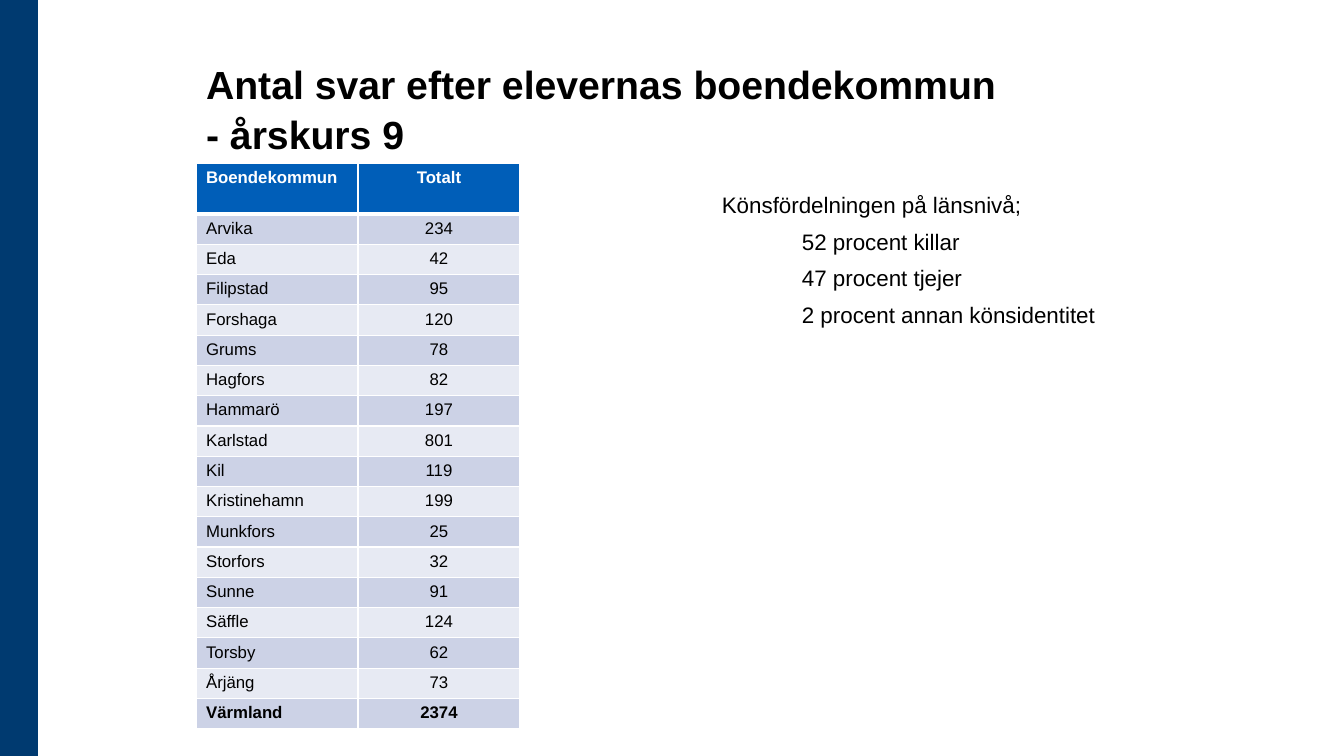
from copy import deepcopy

from lxml.etree import SubElement
from pptx import Presentation
from pptx.dml.color import RGBColor
from pptx.enum.shapes import MSO_SHAPE as Shape
from pptx.enum.text import MSO_ANCHOR as Anchor, MSO_AUTO_SIZE as AutoSize, PP_ALIGN as Align
from pptx.oxml.ns import qn
from pptx.util import Pt

# Content
TITLE = "Antal svar efter elevernas boendekommun\v- årskurs 9"
HEADER = ("Boendekommun", "Totalt")
ANSWERS = [
    ("Arvika", 234), ("Eda", 42), ("Filipstad", 95), ("Forshaga", 120),
    ("Grums", 78), ("Hagfors", 82), ("Hammarö", 197), ("Karlstad", 801),
    ("Kil", 119), ("Kristinehamn", 199), ("Munkfors", 25), ("Storfors", 32),
    ("Sunne", 91), ("Säffle", 124), ("Torsby", 62), ("Årjäng", 73),
    ("Värmland", 2374),
]
GENDER_HEADING = "Könsfördelningen på länsnivå;"
GENDER_SHARES = ["52 procent killar", "47 procent tjejer", "2 procent annan könsidentitet"]

# Look
FONT = "Arial"
BLACK = RGBColor(0x00, 0x00, 0x00)
WHITE = RGBColor(0xFF, 0xFF, 0xFF)
NAVY = RGBColor(0x00, 0x3A, 0x70)
BLUE = RGBColor(0x00, 0x5E, 0xB8)
BAND_DARK = RGBColor(0xCC, 0xD2, 0xE6)
BAND_LIGHT = RGBColor(0xE7, 0xEA, 0xF3)

# Layout in px
EMU_PER_PX = 914400 / 100.8
SLIDE_WIDTH, SLIDE_HEIGHT = 1344, 756
COLUMN_WIDTH, HEADER_HEIGHT, ROW_HEIGHT = 162, 51, 29


def px(*lengths):
    return [round(length * EMU_PER_PX) for length in lengths]


def write(paragraph, text, size=12, color=BLACK, bold=False, align=Align.LEFT,
          line_spacing=None, space_before=0, indent=0):
    paragraph.text = text
    paragraph.alignment = align
    paragraph.line_spacing = line_spacing
    paragraph.space_before = Pt(space_before)
    if indent:
        paragraph._p.get_or_add_pPr().set("marL", str(px(indent)[0]))
    for run in paragraph.runs:
        run.font.name, run.font.size, run.font.bold = FONT, Pt(size), bold
        run.font.color.rgb = color
    for line_break in paragraph._p.findall(qn("a:br")):
        line_break.append(deepcopy(paragraph.runs[0]._r.rPr))


def set_borders(cell, bottom):
    properties = cell._tc.get_or_add_tcPr()
    for index, (side, width) in enumerate([("L", 1), ("R", 1), ("T", 1), ("B", bottom)]):
        line = SubElement(properties, qn(f"a:ln{side}"), w=str(Pt(width)))
        fill = SubElement(line, qn("a:solidFill"))
        SubElement(fill, qn("a:srgbClr"), val=str(WHITE))
        properties.insert(index, line)


presentation = Presentation()
presentation.slide_width, presentation.slide_height = px(SLIDE_WIDTH, SLIDE_HEIGHT)
slide = presentation.slides.add_slide(presentation.slide_layouts[5])

# Side bar
bar = slide.shapes.add_shape(Shape.RECTANGLE, *px(0, 0, 38, SLIDE_HEIGHT))
bar.shadow.inherit = False
bar.fill.solid()
bar.fill.fore_color.rgb = NAVY
bar.line.fill.background()

# Title
title = slide.shapes.title
title.left, title.top, title.width, title.height = px(196, 53, 953, 146)
title.text_frame.vertical_anchor = Anchor.TOP
title.text_frame.auto_size = AutoSize.NONE
write(title.text_frame.paragraphs[0], TITLE, size=28, bold=True, line_spacing=1.05)

# Gender shares
shares = slide.shapes.add_textbox(*px(691, 185, 504, 337)).text_frame
shares.word_wrap = True
write(shares.paragraphs[0], GENDER_HEADING, size=16, line_spacing=1.05, indent=21)
for share in GENDER_SHARES:
    write(shares.add_paragraph(), share, size=16, line_spacing=1.05, space_before=6, indent=101)

# Answers by municipality
rows = [HEADER, *ANSWERS]
table_height = HEADER_HEIGHT + ROW_HEIGHT * len(ANSWERS)
table = slide.shapes.add_table(
    len(rows), len(HEADER), *px(196, 163, COLUMN_WIDTH * len(HEADER), table_height)).table
table.horz_banding = False
for column in table.columns:
    column.width = px(COLUMN_WIDTH)[0]
for row_index, values in enumerate(rows):
    is_header = row_index == 0
    is_total = row_index == len(rows) - 1
    band = BAND_DARK if row_index % 2 else BAND_LIGHT
    table.rows[row_index].height = px(HEADER_HEIGHT if is_header else ROW_HEIGHT)[0]
    for column_index, value in enumerate(values):
        cell = table.cell(row_index, column_index)
        cell.fill.solid()
        cell.fill.fore_color.rgb = BLUE if is_header else band
        set_borders(cell, bottom=3 if is_header else 1)
        write(cell.text_frame.paragraphs[0], str(value),
              color=WHITE if is_header else BLACK, bold=is_header or is_total,
              align=Align.CENTER if column_index else Align.LEFT)

presentation.save("out.pptx")
